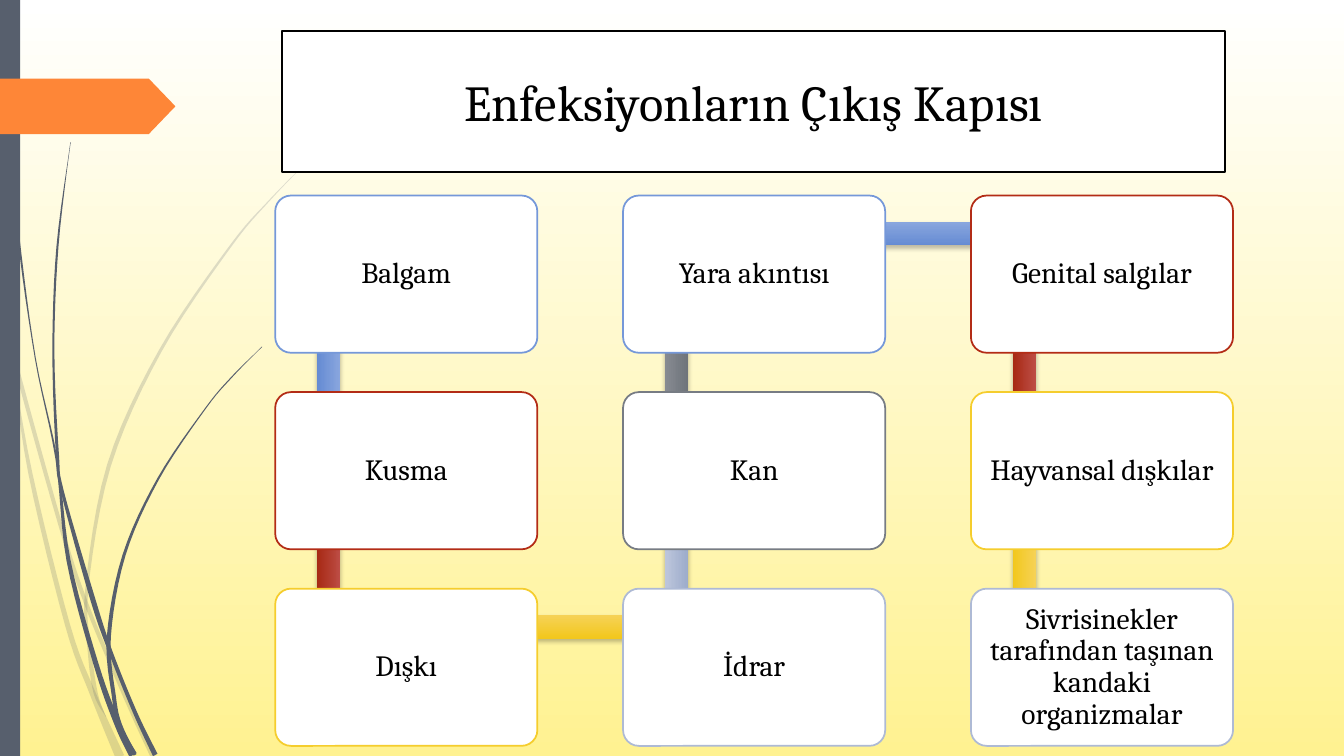
import math

from lxml import etree
from pptx import Presentation
from pptx.dml.color import RGBColor
from pptx.enum.shapes import MSO_SHAPE
from pptx.enum.text import MSO_ANCHOR, PP_ALIGN
from pptx.oxml.ns import qn
from pptx.util import Pt

PX = 9144
RECT = MSO_SHAPE.RECTANGLE
ROUNDED = MSO_SHAPE.ROUNDED_RECTANGLE
PENTAGON = MSO_SHAPE.PENTAGON
CENTER = PP_ALIGN.CENTER
MIDDLE = MSO_ANCHOR.MIDDLE

FONT = "Cambria"
BLACK = RGBColor(0x00, 0x00, 0x00)
WHITE = RGBColor(0xFF, 0xFF, 0xFF)
CREAM = RGBColor(0xFF, 0xF2, 0x91)
SLATE = RGBColor(0x57, 0x5F, 0x6D)
ORANGE = RGBColor(0xFE, 0x86, 0x37)
BLUE = (RGBColor(0x75, 0x98, 0xD9), RGBColor(0x89, 0xA6, 0xDE), RGBColor(0x65, 0x8B, 0xD3))
RED = (RGBColor(0xB3, 0x2C, 0x16), RGBColor(0xBD, 0x4D, 0x45), RGBColor(0xA7, 0x29, 0x14))
YELLOW = (RGBColor(0xF5, 0xCD, 0x2D), RGBColor(0xF6, 0xD2, 0x56), RGBColor(0xF2, 0xC7, 0x1C))
LILAC = (RGBColor(0xAE, 0xBA, 0xD5), RGBColor(0xBD, 0xC6, 0xDC), RGBColor(0x9D, 0xAC, 0xCB))
GREY = (RGBColor(0x77, 0x7C, 0x84), RGBColor(0x86, 0x8A, 0x91), RGBColor(0x6F, 0x74, 0x7B))

ROUTES = [
    ("Balgam", BLUE),
    ("Kusma", RED),
    ("Dışkı", YELLOW),
    ("İdrar", LILAC),
    ("Kan", GREY),
    ("Yara akıntısı", BLUE),
    ("Genital salgılar", RED),
    ("Hayvansal dışkılar", YELLOW),
    ("Sivrisinekler tarafından taşınan kandaki organizmalar", LILAC),
]
ROWS = 3

# Each stem lists (x, y, thickness) along its centre line.
PALE_STEMS = [
    [(0, 290, 4), (14, 355, 4), (60, 521, 4), (86, 600, 4), (125, 693, 4), (152, 751, 5)],
    [(11, 350, 0), (30, 469, 4), (67, 620, 5), (92, 688, 6), (119, 751, 9)],
    [(312, 153, 0), (268, 198, 1), (228, 245, 2), (159, 348, 3), (108, 462, 4),
     (86, 585, 3), (89, 646, 4), (95, 688, 4), (105, 711, 0)],
]
DARK_STEMS = [
    [(4, 0, 1), (7, 109, 1), (18, 232, 2), (35, 355, 1), (56, 455, 2),
     (68, 556, 4), (95, 658, 5), (116, 717, 6), (132, 749, 8)],
    [(70, 141, 0), (57, 245, 2), (53, 349, 2), (57, 451, 3), (62, 488, 3),
     (91, 591, 5), (109, 645, 4), (134, 707, 4), (154, 749, 5)],
    [(260, 344, 0), (231, 373, 1), (204, 405, 1), (157, 475, 2), (123, 551, 3),
     (108, 632, 4), (113, 691, 4), (119, 719, 4), (134, 749, 3)],
]


def gradient(fill, first, last):
    fill.gradient()
    fill.gradient_angle = 270
    for stop, color in zip(fill.gradient_stops, (first, last)):
        stop.color.rgb = color


def paint(sp, color):
    sp.shadow.inherit = False
    sp.fill.solid()
    sp.fill.fore_color.rgb = color
    sp.line.fill.background()


def outline(sp, color):
    sp.line.color.rgb = color
    sp.line.width = Pt(1.25)


def set_text(sp, text, size):
    tf = sp.text_frame
    tf.word_wrap = True
    tf.vertical_anchor = MIDDLE
    p = tf.paragraphs[0]
    p.text = text
    p.alignment = CENTER
    p.font.name = FONT
    p.font.size = Pt(size)
    p.font.color.rgb = BLACK
    return tf


def add_box(s, kind, x, y, w, h, color):
    sp = s.shapes.add_shape(kind, *(round(v * PX) for v in (x, y, w, h)))
    paint(sp, color)
    return sp


def smooth(points, steps=6):
    ends = [points[0], *points, points[-1]]
    curve = []
    for a, b, c, d in zip(ends, ends[1:], ends[2:], ends[3:]):
        for t in (k / steps for k in range(steps)):
            curve.append(tuple(
                q + t * (r - p) / 2 + t * t * (2 * p - 5 * q + 4 * r - u) / 2
                + t ** 3 * (3 * q - p - 3 * r + u) / 2
                for p, q, r, u in zip(a, b, c, d)))
    return curve + [points[-1]]


def add_stem(s, x, y, points, opacity):
    curve = smooth(points)
    left, right = [], []
    for i, (cx, cy, width) in enumerate(curve):
        before, after = curve[max(i - 1, 0)], curve[min(i + 1, len(curve) - 1)]
        angle = math.atan2(after[1] - before[1], after[0] - before[0])
        half = max(width, 0.4) / 2
        dx, dy = half * math.sin(angle), -half * math.cos(angle)
        left.append(((x + cx + dx) * PX, (y + cy + dy) * PX))
        right.append(((x + cx - dx) * PX, (y + cy - dy) * PX))
    edge = left + right[::-1]
    builder = s.shapes.build_freeform(*edge[0])
    builder.add_line_segments(edge[1:], close=True)
    sp = builder.convert_to_shape()
    paint(sp, SLATE)
    if opacity < 100:
        clr = sp.fill._xPr.find(qn("a:solidFill"))[0]
        etree.SubElement(clr, qn("a:alpha"), val=str(opacity * 1000))


def add_side_decor(s, x, y, h):
    for stems, opacity in ((PALE_STEMS, 20), (DARK_STEMS, 100)):
        for points in stems:
            add_stem(s, x, y, points, opacity)
    add_box(s, RECT, x, y, 20, h, SLATE)
    tab = add_box(s, PENTAGON, x, y + 78, 174, 55, ORANGE)
    tab.adjustments[0] = 0.48


def add_title(s, x, y, w, h):
    title = s.shapes.title
    title.left, title.top, title.width, title.height = (v * PX for v in (x, y, w, h))
    title.fill.solid()
    title.fill.fore_color.rgb = WHITE
    outline(title, BLACK)
    set_text(title, "Enfeksiyonların Çıkış Kapısı", 36)
    s.shapes._spTree.append(title._element)


def add_bar(s, start, end, colors):
    (x1, y1), (x2, y2) = start, end
    length, thick = math.dist(start, end), 23
    bar = add_box(s, RECT, (x1 + x2 - length) / 2, (y1 + y2 - thick) / 2,
                  length, thick, colors[2])
    bar.rotation = math.degrees(math.atan2(y2 - y1, x2 - x1)) % 360
    gradient(bar.fill, *colors[1:])
    effects = bar._element.spPr.find(qn("a:effectLst"))
    shadow = etree.SubElement(effects, qn("a:outerShdw"), blurRad=str(Pt(3)),
                              dist=str(Pt(2)), dir="5400000", rotWithShape="0")
    clr = etree.SubElement(shadow, qn("a:srgbClr"), val=str(BLACK))
    etree.SubElement(clr, qn("a:alpha"), val="25000")


def add_card(s, x, y, w, h, text, color):
    card = add_box(s, ROUNDED, x, y, w, h, WHITE)
    card.adjustments[0] = 0.1
    outline(card, color)
    tf = set_text(card, text, 21)
    tf.margin_left = tf.margin_right = tf.margin_top = tf.margin_bottom = 9 * PX
    tf.paragraphs[0].line_spacing = 0.9


def add_route_snake(s, x, y, w, h):
    card_w, card_h = 260, 156
    step_x, step_y = (w - card_w) // 2, (h - card_h) // (ROWS - 1)
    corners = []
    for i in range(len(ROUTES)):
        col, row = divmod(i, ROWS)
        if col % 2:
            row = ROWS - 1 - row
        corners.append((x + col * step_x, y + row * step_y))
    anchors = [(cx + 53, cy + 38) for cx, cy in corners]
    for i, (text, colors) in enumerate(ROUTES):
        if i + 1 < len(ROUTES):
            add_bar(s, anchors[i], anchors[i + 1], colors)
        add_card(s, *corners[i], card_w, card_h, text, colors[0])


def main():
    prs = Presentation()
    prs.slide_width, prs.slide_height = 1333 * PX, 750 * PX
    s = prs.slides.add_slide(prs.slide_layouts[5])
    gradient(s.background.fill, WHITE, CREAM)
    add_side_decor(s, 0, 0, 750)
    add_title(s, 280, 31, 935, 140)
    add_route_snake(s, 273, 194, 950, 546)
    prs.save("out.pptx")


if __name__ == "__main__":
    main()
